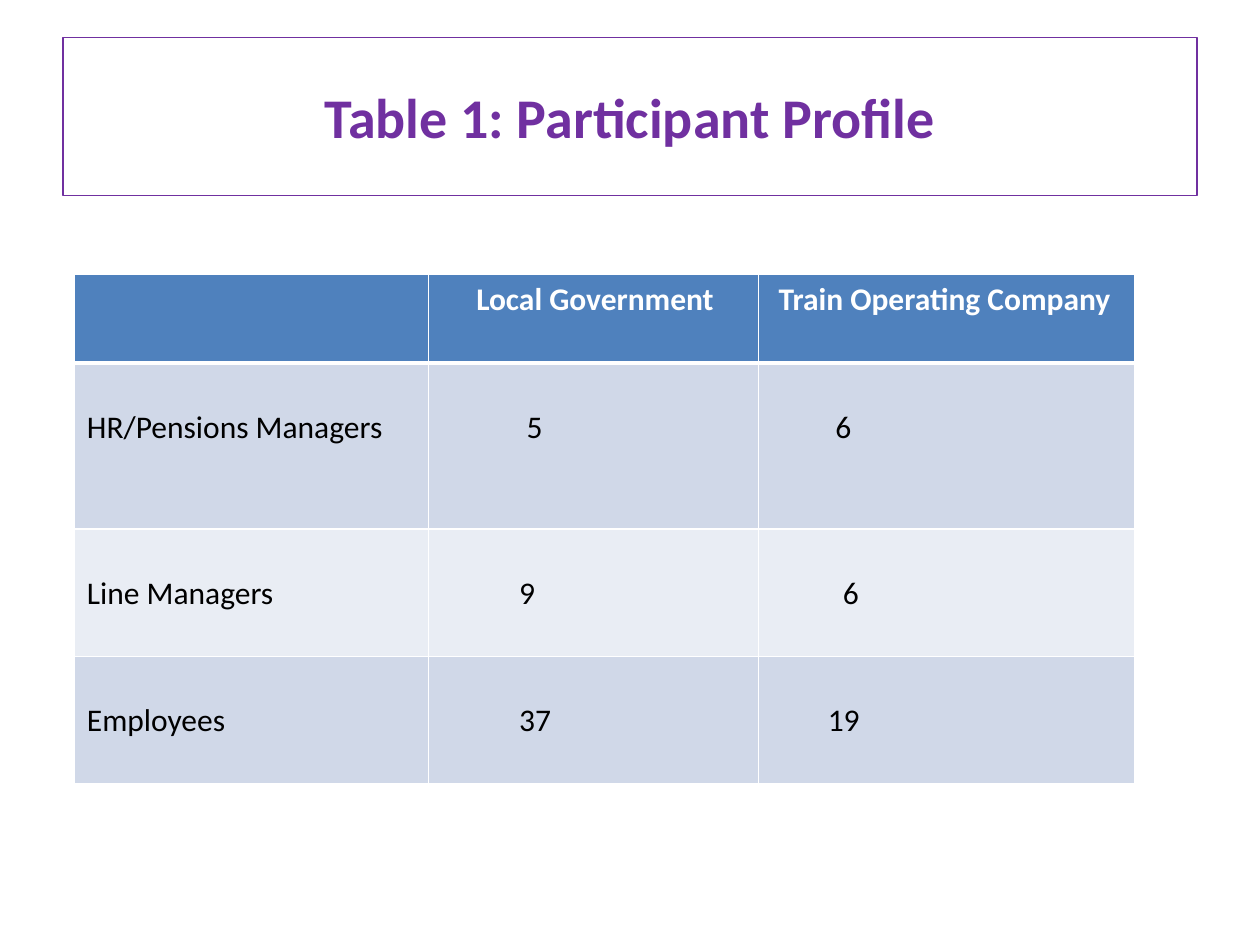
from dataclasses import dataclass

import pptx
import pptx.dml.color
import pptx.enum.shapes
import pptx.enum.text
import pptx.oxml
import pptx.oxml.ns
import pptx.util
from pptx.util import Inches


@dataclass(frozen=True)
class Theme:
    """Colours, font and sizes of the slide."""
    font: str = "Calibri"
    title: str = "7030A0"
    header: str = "4F81BD"
    bands: tuple = ("D0D8E8", "E9EDF4")
    light: str = "FFFFFF"
    dark: str = "000000"
    title_size: int = 32
    body_size: int = 18
    outline: float = 0.75
    rule: int = 1
    header_rule: int = 3


THEME = Theme()
COLUMN_WIDTHS = (2.81, 2.62, 2.99)
ROW_HEIGHTS = (0.7, 1.32, 1.01, 1.01)
PROFILE = (
    (("", 0.1), ("Local Government", 0.38), ("Train Operating Company", 0.16)),
    (("HR/Pensions Managers", 0.1), ("5", 0.78), ("6", 0.61)),
    (("Line Managers", 0.1), ("9", 0.72), ("6", 0.67)),
    (("Employees", 0.1), ("37", 0.72), ("19", 0.55)),
)


def rgb(value):
    """Return the colour object for a hex value."""
    return pptx.dml.color.RGBColor.from_string(value)


def write(frame, text, *, size=THEME.body_size, color=THEME.dark, bold=False, align=None):
    """Put formatted text into a text frame."""
    paragraph = frame.paragraphs[0]
    paragraph.alignment = align
    paragraph.font.size = pptx.util.Pt(size)
    if not text:
        return
    run = paragraph.add_run()
    run.text = text
    run.font.name = THEME.font
    run.font.size = pptx.util.Pt(size)
    run.font.bold = bold
    run.font.color.rgb = rgb(color)


def add_title(slide, text):
    """Add the outlined title box."""
    title = slide.shapes.add_shape(
        pptx.enum.shapes.MSO_SHAPE.RECTANGLE, Inches(0.5), Inches(0.3), Inches(9), Inches(1.25))
    title.shadow.inherit = False
    title.fill.background()
    title.line.color.rgb = rgb(THEME.title)
    title.line.width = pptx.util.Pt(THEME.outline)
    title.text_frame.word_wrap = True
    title.text_frame.vertical_anchor = pptx.enum.text.MSO_ANCHOR.MIDDLE
    write(title.text_frame, text, size=THEME.title_size, color=THEME.title, bold=True,
          align=pptx.enum.text.PP_ALIGN.CENTER)


def set_borders(cell, top, bottom):
    """Draw light rules around a cell, with top and bottom widths in points."""
    properties = cell._tc.get_or_add_tcPr()
    widths = {"lnL": THEME.rule, "lnR": THEME.rule, "lnT": top, "lnB": bottom}
    for position, (side, width) in enumerate(widths.items()):
        properties.insert(position, pptx.oxml.parse_xml(
            f'<a:{side} {pptx.oxml.ns.nsdecls("a")} w="{pptx.util.Pt(width)}"><a:solidFill>'
            f'<a:srgbClr val="{THEME.light}"/></a:solidFill></a:{side}>'))


def fill_cell(cell, row, text, indent):
    """Colour, rule and label one cell of the given row."""
    is_header = row == 0
    cell.fill.solid()
    cell.fill.fore_color.rgb = rgb(THEME.header if is_header else THEME.bands[(row - 1) % 2])
    cell.margin_left = Inches(indent)
    cell.margin_top = Inches(0.05 if is_header else 0.36)
    set_borders(cell, THEME.header_rule if row == 1 else THEME.rule,
                THEME.header_rule if is_header else THEME.rule)
    write(cell.text_frame, text, color=THEME.light if is_header else THEME.dark, bold=is_header)


def add_profile_table(slide):
    """Add the table of participants by role and sector."""
    profile = slide.shapes.add_table(
        len(PROFILE), len(COLUMN_WIDTHS), Inches(0.59), Inches(2.18),
        Inches(sum(COLUMN_WIDTHS)), Inches(sum(ROW_HEIGHTS))).table
    for column, width in zip(profile.columns, COLUMN_WIDTHS):
        column.width = Inches(width)
    for row, (height, entries) in enumerate(zip(ROW_HEIGHTS, PROFILE)):
        profile.rows[row].height = Inches(height)
        for column, (text, indent) in enumerate(entries):
            fill_cell(profile.cell(row, column), row, text, indent)


def main():
    """Build and save the slide."""
    deck = pptx.Presentation()
    deck.slide_width, deck.slide_height = Inches(10), Inches(7.5)
    slide = deck.slides.add_slide(deck.slide_layouts[6])
    add_title(slide, "Table 1: Participant Profile")
    add_profile_table(slide)
    deck.save("out.pptx")


if __name__ == "__main__":
    main()
